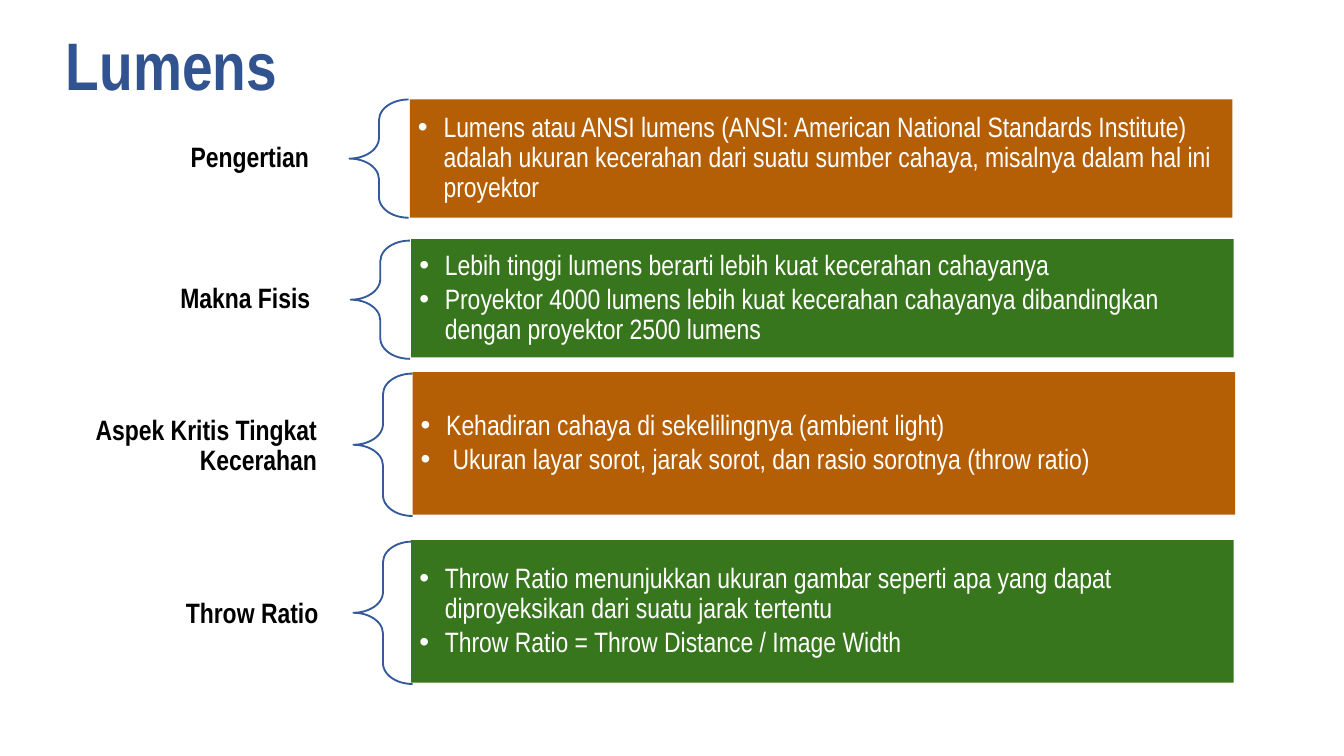
from lxml.etree import SubElement
from pptx import Presentation
from pptx.dml.color import RGBColor
from pptx.enum.shapes import MSO_SHAPE
from pptx.enum.text import MSO_ANCHOR, PP_ALIGN
from pptx.oxml.ns import qn
from pptx.util import Inches, Pt

FONT = "Arial Narrow"
BLUE = RGBColor(0x31, 0x53, 0x8F)
EDGE = RGBColor(0x34, 0x5A, 0x99)
BLACK = RGBColor(0, 0, 0)
WHITE = RGBColor(255, 255, 255)
ORANGE = RGBColor(0xB4, 0x5F, 0x06)
GREEN = RGBColor(0x38, 0x76, 0x1D)

TITLE = "Lumens"
# label, (left, top, width) of label, (left, top) of brace and of panel,
# height, colour, points
ROWS = [
    ("Pengertian", (0.84, 0.74, 1.58), (2.6, 0.74), (3.05, 0.74),
     0.88, ORANGE, [
        "Lumens atau ANSI lumens (ANSI: American National Standards Institute) "
        "adalah ukuran kecerahan dari suatu sumber cahaya, misalnya dalam hal "
        "ini proyektor"]),
    ("Makna Fisis", (1.13, 1.79, 1.3), (2.61, 1.79), (3.06, 1.78),
     0.88, GREEN, [
        "Lebih tinggi lumens berarti lebih kuat kecerahan cahayanya",
        "Proyektor 4000 lumens lebih kuat kecerahan cahayanya dibandingkan "
        "dengan proyektor 2500 lumens"]),
    ("Aspek Kritis Tingkat Kecerahan", (0.3, 2.79, 2.18), (2.63, 2.78),
     (3.07, 2.77), 1.06, ORANGE, [
        "Kehadiran cahaya di sekelilingnya (ambient light)",
        " Ukuran layar sorot, jarak sorot, dan rasio sorotnya (throw ratio)"]),
    ("Throw Ratio", (0.31, 4.04, 2.18), (2.63, 4.03), (3.06, 4.02),
     1.06, GREEN, [
        "Throw Ratio menunjukkan ukuran gambar seperti apa yang dapat "
        "diproyeksikan dari suatu jarak tertentu",
        "Throw Ratio = Throw Distance / Image Width"]),
]
PANEL_W = 6.12
BRACE_W = 0.44
INDENT = 0.19


def write(shape, lines, size, colour, bold, anchor, align, pad, bullets=False):
    """Fill a shape with paragraphs; pad is (side, top and bottom)."""
    frame = shape.text_frame
    frame.word_wrap = True
    frame.vertical_anchor = anchor
    frame.margin_left = frame.margin_right = Inches(pad[0])
    frame.margin_top = frame.margin_bottom = Inches(pad[1])
    frame.text = "\n".join(lines)
    for i, para in enumerate(frame.paragraphs):
        para.alignment = align
        para.line_spacing = 0.9
        if i:
            para.space_before = Pt(2)
        if bullets:
            add_bullet(para)
        for run in para.runs:
            font = run.font
            font.name, font.size, font.bold = FONT, Pt(size), bold
            font.color.rgb = colour


def add_bullet(para):
    para.level = 1
    props = para._p.get_or_add_pPr()
    props.set("marL", str(Inches(INDENT)))
    props.set("indent", str(-Inches(INDENT)))
    SubElement(props, qn("a:buFont")).set("typeface", "Arial")
    SubElement(props, qn("a:buChar")).set("char", "•")


def add_text(slide, box, *style):
    shape = slide.shapes.add_textbox(*map(Inches, box))
    write(shape, *style)


def add_shape(slide, kind, box):
    shape = slide.shapes.add_shape(kind, *map(Inches, box))
    shape.shadow.inherit = False
    return shape


def add_row(slide, label, place, curl, spot, height, colour, points):
    add_text(slide, (*place, height), [label], 15, BLACK, True,
             MSO_ANCHOR.MIDDLE, PP_ALIGN.RIGHT, (0.12, 0.04))

    brace = add_shape(slide, MSO_SHAPE.LEFT_BRACE, (*curl, BRACE_W, height))
    brace.adjustments[0] = 0.35
    brace.fill.background()
    brace.line.color.rgb = EDGE
    brace.line.width = Pt(1)

    panel = add_shape(slide, MSO_SHAPE.RECTANGLE, (*spot, PANEL_W, height))
    panel.fill.solid()
    panel.fill.fore_color.rgb = colour
    panel.line.fill.background()
    write(panel, points, 15, WHITE, False, MSO_ANCHOR.MIDDLE,
          PP_ALIGN.LEFT, (0.06, 0.06), True)


def main():
    deck = Presentation()
    deck.slide_width = Inches(10)
    deck.slide_height = deck.slide_width * 9 // 16
    slide = deck.slides.add_slide(deck.slide_layouts[6])
    add_text(slide, (0.42, 0.05, 2.14, 0.77), [TITLE], 36, BLUE, True,
             MSO_ANCHOR.BOTTOM, PP_ALIGN.LEFT, (0.07, 0.04))
    for row in ROWS:
        add_row(slide, *row)
    deck.save("out.pptx")


if __name__ == "__main__":
    main()
